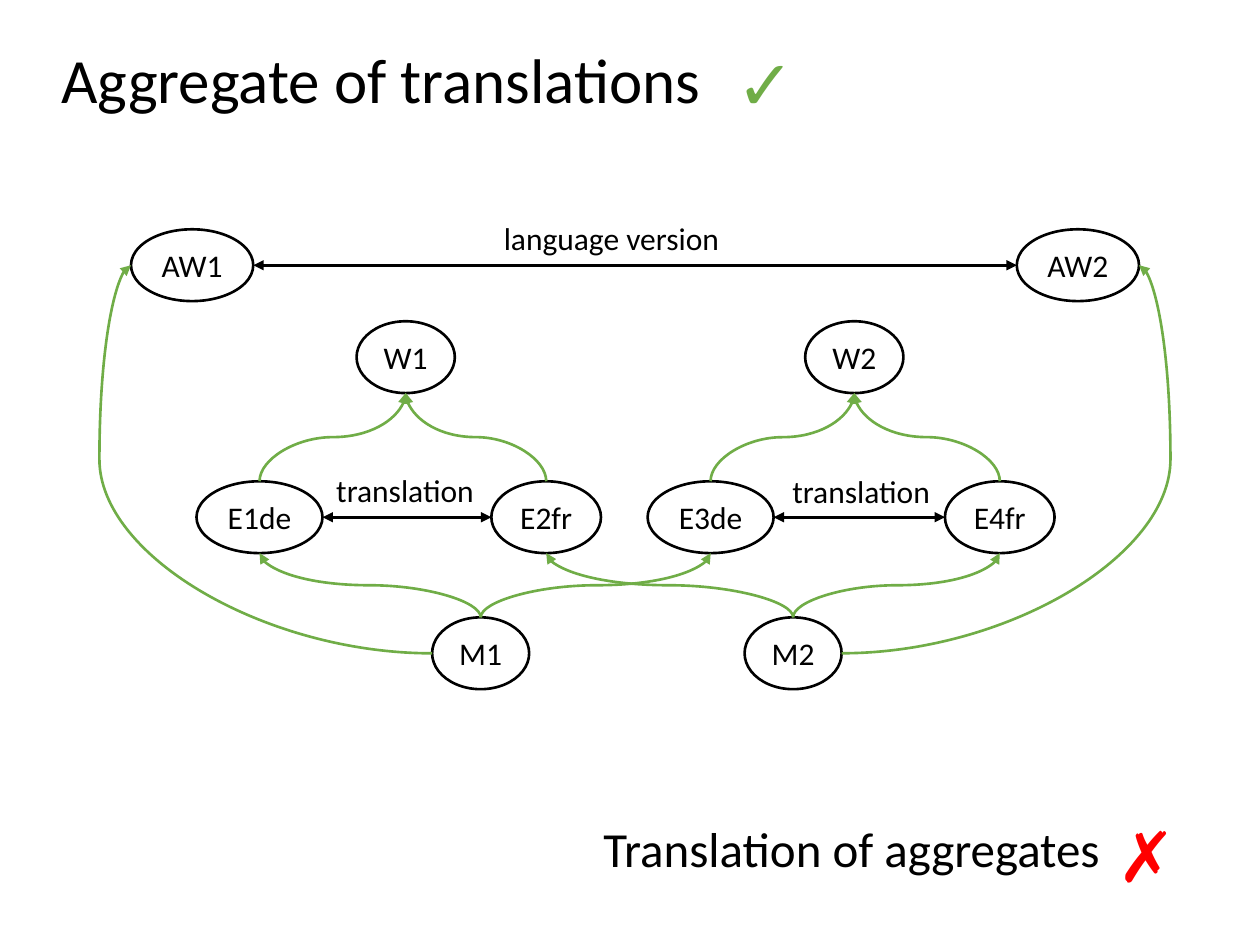
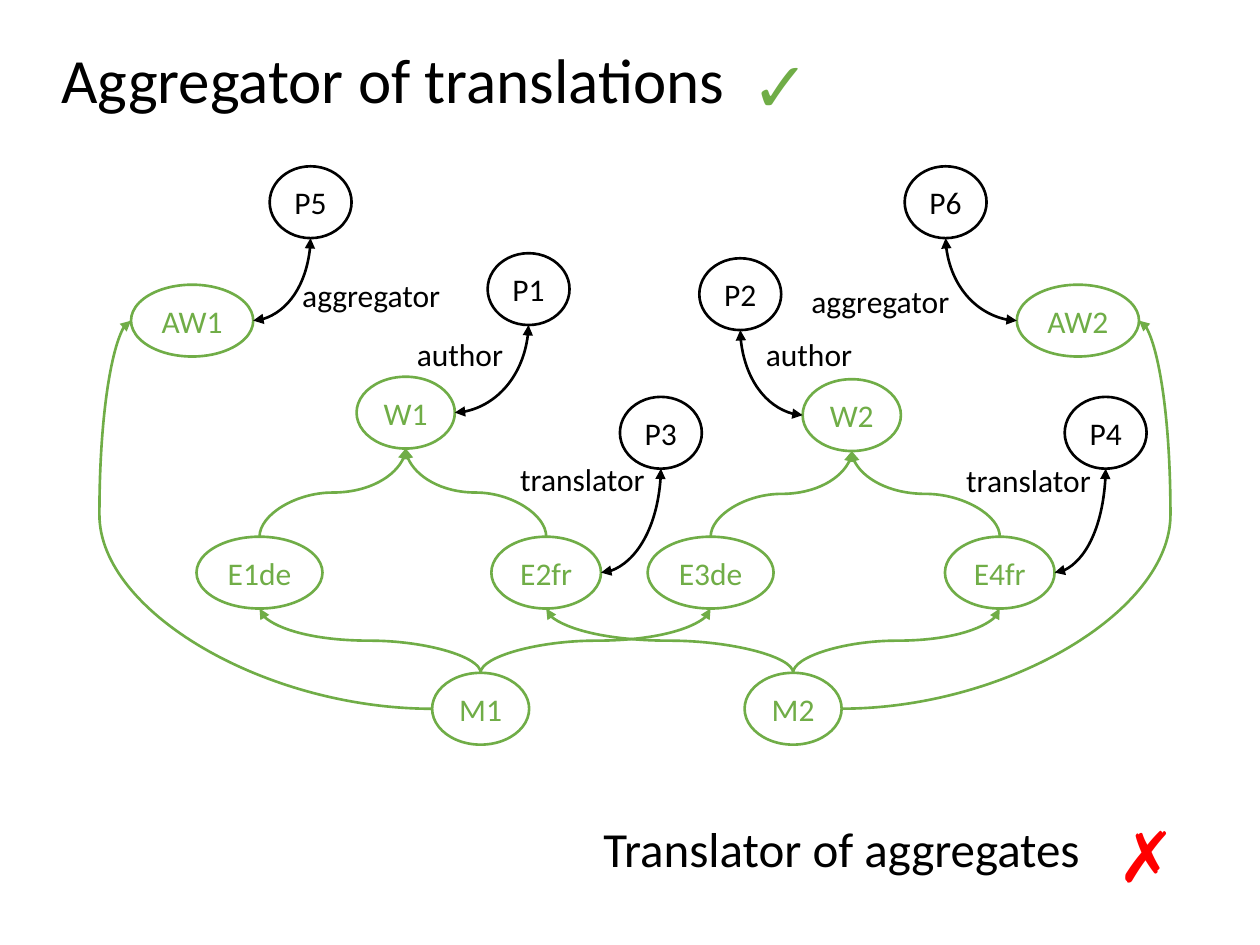
from lxml import etree
from pptx import Presentation
from pptx.dml.color import RGBColor
from pptx.enum import shapes, text
from pptx.oxml.ns import qn
from pptx.util import Inches, Pt

BLACK = RGBColor(0x00, 0x00, 0x00)
GREEN = RGBColor(0x70, 0xAD, 0x47)
RED = RGBColor(0xFF, 0x00, 0x00)

NODE_HEIGHT = 0.57
LABEL_HEIGHT = 0.4
PERSON_WIDTH = 0.65
LOOP_BULGE = 0.25
LOWER_SHIFT = 0.44

SITES = {
    "top": (0, 0.5, 0),
    "left": (2, 0, 0.5),
    "bottom": (4, 0.5, 1),
    "right": (6, 1, 0.5),
}

GRAPH_NODES = {
    "W2": (6.39, 2.55, 0.78),
    "W1": (2.83, 2.55, 0.78),
    "M2": (5.91, 4.9, 0.77),
    "M1": (3.43, 4.9, 0.77),
    "E4fr": (7.5, 3.82, 0.87),
    "E3de": (5.14, 3.82, 1),
    "E2fr": (3.9, 3.82, 0.87),
    "E1de": (1.56, 3.82, 1),
    "AW1": (1.04, 1.82, 0.97),
    "AW2": (8.07, 1.82, 0.97),
}

GRAPH_RISES = [
    ("M2", "E4fr"), ("E4fr", "W2"), ("E3de", "W2"), ("E2fr", "W1"),
    ("E1de", "W1"), ("M1", "E3de"), ("M1", "E1de"), ("M2", "E2fr"),
]
GRAPH_LOOPS = [("M1", "AW1", "left"), ("M2", "AW2", "right")]

LANGUAGE_LINKS = [("E4fr", "E3de"), ("E2fr", "E1de"), ("AW2", "AW1")]
LANGUAGE_LABELS = [
    ("translation", 2.57, 3.69, 1.31),
    ("translation", 6.19, 3.7, 1.31),
    ("language version", 3.9, 1.69, 1.93),
]

PERSONS = {
    "P1": (3.87, 2.01),
    "P2": (5.55, 2.05),
    "P3": (4.92, 3.15),
    "P4": (8.45, 3.15),
    "P5": (2.14, 1.32),
    "P6": (7.18, 1.32),
}
PERSON_LINKS = [
    ("E4fr", "right", "P4"), ("E2fr", "right", "P3"),
    ("AW1", "right", "P5"), ("AW2", "left", "P6"),
    ("W1", "right", "P1"), ("W2", "left", "P2"),
]
PERSON_LABELS = [
    ("aggregator", 2.3, 2.14, 1.31),
    ("aggregator", 6.34, 2.19, 1.31),
    ("translator", 4.03, 3.6, 1.2),
    ("translator", 7.57, 3.61, 1.2),
    ("author", 3.21, 2.61, 0.89),
    ("author", 5.98, 2.61, 0.89),
]


def set_values(target, values):
    for name, value in values.items():
        setattr(target, name, value)


class Deck:
    font = "Calibri"
    line_width = Pt(1.5)

    def __init__(self):
        self.deck = Presentation()
        set_values(self.deck, {"slide_width": Inches(10), "slide_height": Inches(7.5)})

    def add_page(self):
        self.page = self.deck.slides.add_slide(self.deck.slide_layouts[6])
        self.nodes = {}

    def put_words(self, box, words, size, color, align, wrap=False):
        frame = box.text_frame
        set_values(frame, {"word_wrap": wrap, "auto_size": text.MSO_AUTO_SIZE.SHAPE_TO_FIT_TEXT})
        para = frame.paragraphs[0]
        para.alignment = align
        span = para.add_run()
        span.text = words
        set_values(span.font, {"name": self.font, "size": Pt(size)})
        span.font.color.rgb = color

    def label(self, words, left, top, width, height=LABEL_HEIGHT, size=18, color=BLACK, wrap=False):
        box = self.page.shapes.add_textbox(*map(Inches, (left, top, width, height)))
        self.put_words(box, words, size, color, text.PP_ALIGN.LEFT, wrap)

    def node(self, name, left, top, width, color):
        area = (left, top, width, NODE_HEIGHT)
        box = self.page.shapes.add_shape(shapes.MSO_SHAPE.OVAL, *map(Inches, area))
        box.shadow.inherit = False
        box.fill.background()
        box.line.width = self.line_width
        box.line.color.rgb = color
        self.put_words(box, name, 18, color, text.PP_ALIGN.CENTER)
        self.nodes[name] = (box, area)

    def anchor(self, name, side):
        box, (left, top, width, height) = self.nodes[name]
        site, across, down = SITES[side]
        return box.shape_id, site, left + across * width, top + down * height

    def curve(self, start, start_side, end, end_side, color=GREEN, both=False,
              preset="curvedConnector3", bulge=None):
        *start_glue, x1, y1 = self.anchor(start, start_side)
        *end_glue, x2, y2 = self.anchor(end, end_side)
        width, height = abs(x2 - x1), abs(y2 - y1)
        rightward = x2 > x1
        if start_side == "top":
            width, height = height, width
            turn = {"rot": 90, "flipH": 1, "flipV": 1} if rightward else {"rot": 270, "flipV": 1}
        else:
            turn = {"flipV": 1} if rightward else {"rot": 180}
        left, top = (x1 + x2 - width) / 2, (y1 + y2 - height) / 2
        link = self.page.shapes.add_connector(
            shapes.MSO_CONNECTOR.CURVE,
            *map(Inches, (left, top, left + width, top + height)))
        link.line.width = self.line_width
        link.line.color.rgb = color

        frame = link.element.xpath(".//a:xfrm")[0]
        for name, value in turn.items():
            frame.set(name, str(value * 60000 if name == "rot" else value))
        outline = link.element.xpath(".//a:prstGeom")[0]
        outline.set("prst", preset)
        if bulge:
            guides = outline.find(qn("a:avLst"))
            share = round((1 + bulge / width) * 100000)
            etree.SubElement(guides, qn("a:gd"), name="adj1", fmla=f"val {share}")
        stroke = link.element.xpath(".//a:ln")[0]
        for tag in ("a:headEnd", "a:tailEnd")[0 if both else 1:]:
            etree.SubElement(stroke, qn(tag), type="triangle")
        etree.SubElement(link.element.spPr, qn("a:effectLst"))
        ties = link.element.xpath(".//p:cNvCxnSpPr")[0]
        for tag, (shape_id, site) in (("a:stCxn", start_glue), ("a:endCxn", end_glue)):
            etree.SubElement(ties, qn(tag), id=str(shape_id), idx=str(site))

    def graph(self, color, shift=0, moved=None):
        for name, (left, top, width) in GRAPH_NODES.items():
            left, top = (moved or {}).get(name, (left, top + shift))
            self.node(name, left, top, width, color)
        for start, end in GRAPH_RISES:
            self.curve(start, "top", end, "bottom")
        for start, end, side in GRAPH_LOOPS:
            self.curve(start, side, end, side, bulge=LOOP_BULGE)

    def verdicts(self, title, title_width, check_left, check_top, rejected, rejected_width):
        self.label(title, 0.39, 0.27, title_width, 0.71, 36)
        self.label("✓", check_left, check_top, 0.64, 0.77, 40, GREEN)
        self.label(rejected, 4.69, 6.45, rejected_width, 0.57, 28)
        self.label("✗", 8.78, 6.4, 0.19, 0.77, 40, RED, wrap=True)


def aggregate_page(deck):
    deck.add_page()
    deck.graph(BLACK)
    for start, end in LANGUAGE_LINKS:
        deck.curve(start, "left", end, "right", BLACK, both=True)
    for label in LANGUAGE_LABELS:
        deck.label(*label)
    deck.verdicts("Aggregate of translations", 5.33, 5.75, 0.27,
                  "Translation of aggregates", 4.18)


def aggregator_page(deck):
    deck.add_page()
    deck.graph(GREEN, LOWER_SHIFT, {"W2": (6.37, 3.01)})
    for name, (left, top) in PERSONS.items():
        deck.node(name, left, top, PERSON_WIDTH, BLACK)
    for start, side, person in PERSON_LINKS:
        deck.curve(start, side, person, "bottom", BLACK, both=True, preset="curvedConnector2")
    for label in PERSON_LABELS:
        deck.label(*label)
    deck.verdicts("Aggregator of translations", 5.52, 5.87, 0.29,
                  "Translator of aggregates", 4.02)


def main():
    deck = Deck()
    aggregate_page(deck)
    aggregator_page(deck)
    deck.deck.save("out.pptx")


if __name__ == "__main__":
    main()
